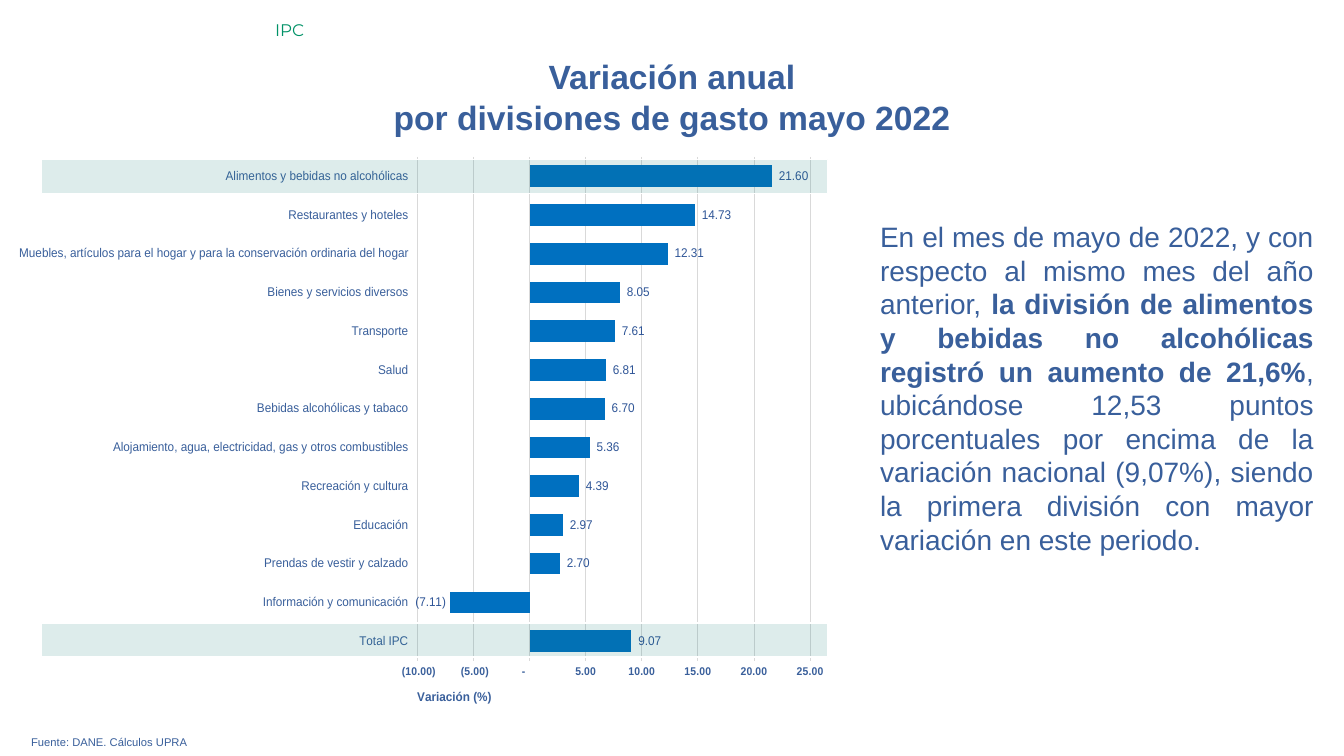
from lxml.etree import SubElement
from pptx import Presentation
from pptx.chart.data import CategoryChartData
from pptx.dml.color import RGBColor
from pptx.enum.chart import XL_CHART_TYPE, XL_LABEL_POSITION, XL_TICK_LABEL_POSITION, XL_TICK_MARK
from pptx.enum.shapes import MSO_SHAPE
from pptx.enum.text import PP_ALIGN
from pptx.oxml import parse_xml
from pptx.oxml.ns import nsdecls, qn
from pptx.util import Inches, Pt

NUMBER_FORMAT = '_(* #,##0.00_);_(* \\(#,##0.00\\);_(* "-"??_);_(@_)'

DIVISIONS = [
    ("Total IPC", 9.07),
    ("Información y comunicación", -7.11),
    ("Prendas de vestir y calzado", 2.70),
    ("Educación", 2.97),
    ("Recreación y cultura", 4.39),
    ("Alojamiento, agua, electricidad, gas y otros combustibles", 5.36),
    ("Bebidas alcohólicas y tabaco", 6.70),
    ("Salud", 6.81),
    ("Transporte", 7.61),
    ("Bienes y servicios diversos", 8.05),
    ("Muebles, artículos para el hogar y para la conservación ordinaria del hogar", 12.31),
    ("Restaurantes y hoteles", 14.73),
    ("Alimentos y bebidas no alcohólicas", 21.60),
]


def color(value):
    return RGBColor.from_string(value)


def manual_layout(**settings):
    entries = "".join(f'<c:{name} val="{value}"/>' for name, value in settings.items())
    return parse_xml(
        f'<c:layout {nsdecls("c")}><c:manualLayout>{entries}</c:manualLayout></c:layout>'
    )


class SlideBuilder:
    ink = "395F9B"
    label_ink = "2F5597"
    bar = "0070C0"
    grid = "D9D9D9"
    band = "117A76"
    font_name = "Arial"

    def __init__(self, slide):
        self.slide = slide

    def style(self, font, size, ink=None, bold=False, name=None):
        font.size = Pt(size)
        font.bold = bold
        font.name = name or self.font_name
        font.color.rgb = color(ink or self.ink)

    def text(self, left, top, width, height, paragraphs, size, align=PP_ALIGN.LEFT, **style):
        shape = self.slide.shapes.add_textbox(
            Inches(left), Inches(top), Inches(width), Inches(height)
        )
        frame = shape.text_frame
        frame.word_wrap = True
        for index, runs in enumerate(paragraphs):
            paragraph = frame.paragraphs[0] if index == 0 else frame.add_paragraph()
            paragraph.alignment = align
            self.style(paragraph.font, size, **style)
            for content, bold in runs:
                run = paragraph.add_run()
                run.text = content
                if bold:
                    run.font.bold = True

    def highlight(self, left, top, width, height):
        shape = self.slide.shapes.add_shape(
            MSO_SHAPE.RECTANGLE, Inches(left), Inches(top), Inches(width), Inches(height)
        )
        shape.shadow.inherit = False
        shape.fill.solid()
        shape.fill.fore_color.rgb = color(self.band)
        fill_color = shape.fill._xPr.find(qn("a:solidFill"))[0]
        SubElement(fill_color, qn("a:alpha")).set("val", "14000")
        shape.line.color.rgb = color("FFFFFF")
        shape.line.width = Pt(1)

    def bar_chart(self, left, top, width, height, rows, axis_title):
        data = CategoryChartData()
        data.categories = [name for name, _ in rows]
        data.add_series("Variación", [value for _, value in rows])
        chart = self.slide.shapes.add_chart(
            XL_CHART_TYPE.BAR_CLUSTERED,
            Inches(left), Inches(top), Inches(width), Inches(height), data,
        ).chart
        chart.has_legend = False
        chart.has_title = False
        self.style(chart.font, 10.5, "000000")
        self.bars(chart.plots[0])
        self.category_axis(chart.category_axis)
        self.value_axis(chart.value_axis, axis_title)
        plot_area = chart._chartSpace.chart.plotArea
        for layout in plot_area.findall(qn("c:layout")):
            plot_area.remove(layout)
        plot_area.insert(0, manual_layout(
            layoutTarget="inner", xMode="edge", yMode="edge",
            x=0.453, y=0.036, w=0.521, h=0.869,
        ))

    def bars(self, plot):
        plot.gap_width = 79
        plot.vary_by_categories = False
        series = plot.series[0]
        series.invert_if_negative = False
        series.format.fill.solid()
        series.format.fill.fore_color.rgb = color(self.bar)
        labels = series.data_labels
        labels.show_value = True
        labels.position = XL_LABEL_POSITION.OUTSIDE_END
        labels.number_format = NUMBER_FORMAT
        labels.number_format_is_linked = False
        self.style(labels.font, 9, self.label_ink)

    def category_axis(self, axis):
        axis.tick_label_position = XL_TICK_LABEL_POSITION.LOW
        axis.major_tick_mark = axis.minor_tick_mark = XL_TICK_MARK.NONE
        axis.format.line.color.rgb = color(self.grid)
        axis.format.line.width = Pt(0.75)
        self.style(axis.tick_labels.font, 9)

    def value_axis(self, axis, title):
        axis.minimum_scale = -10
        axis.maximum_scale = 25
        axis.major_unit = 5
        axis.major_tick_mark = axis.minor_tick_mark = XL_TICK_MARK.NONE
        axis.format.line.fill.background()
        axis.major_gridlines.format.line.color.rgb = color(self.grid)
        axis.major_gridlines.format.line.width = Pt(0.75)
        axis.tick_labels.number_format = NUMBER_FORMAT
        axis.tick_labels.number_format_is_linked = False
        self.style(axis.tick_labels.font, 8, bold=True)
        frame = axis.axis_title.text_frame
        frame.text = title
        self.style(frame.paragraphs[0].font, 9, bold=True)
        element = axis.axis_title._element
        for layout in element.findall(qn("c:layout")):
            element.remove(layout)
        element.find(qn("c:tx")).addnext(
            manual_layout(xMode="edge", yMode="edge", x=0.45, y=0.95)
        )


def main():
    presentation = Presentation()
    presentation.slide_width = Inches(13.33)
    presentation.slide_height = Inches(7.5)
    builder = SlideBuilder(presentation.slides.add_slide(presentation.slide_layouts[6]))

    builder.bar_chart(0.19, 1.35, 8.04, 5.75, DIVISIONS, "Variación (%)")
    builder.text(
        1.38, 0.51, 10.57, 0.91,
        [[("Variación anual", False)], [("por divisiones de gasto mayo 2022", False)]],
        24, PP_ALIGN.CENTER, bold=True,
    )
    builder.text(
        8.63, 2.13, 4.5, 3.47,
        [[
            ("En el mes de mayo de 2022, y con respecto al mismo mes del año anterior, ", False),
            ("la división de alimentos y bebidas no alcohólicas registró un aumento de 21,6%", True),
            (", ubicándose 12,53 puntos porcentuales por encima de la variación nacional "
             "(9,07%), siendo la primera división con mayor variación en este periodo.", False),
        ]],
        20, PP_ALIGN.JUSTIFY,
    )
    builder.text(2.63, 0.15, 10.7, 0.3, [[("IPC", False)]], 12, ink="009267", name="Montserrat")
    builder.text(
        0.21, 7.25, 12.91, 0.24, [[("Fuente: DANE. Cálculos UPRA", False)]], 8, PP_ALIGN.JUSTIFY
    )
    for top in (6.18, 1.58):
        builder.highlight(0.41, top, 7.8, 0.34)

    presentation.save("out.pptx")


if __name__ == "__main__":
    main()
